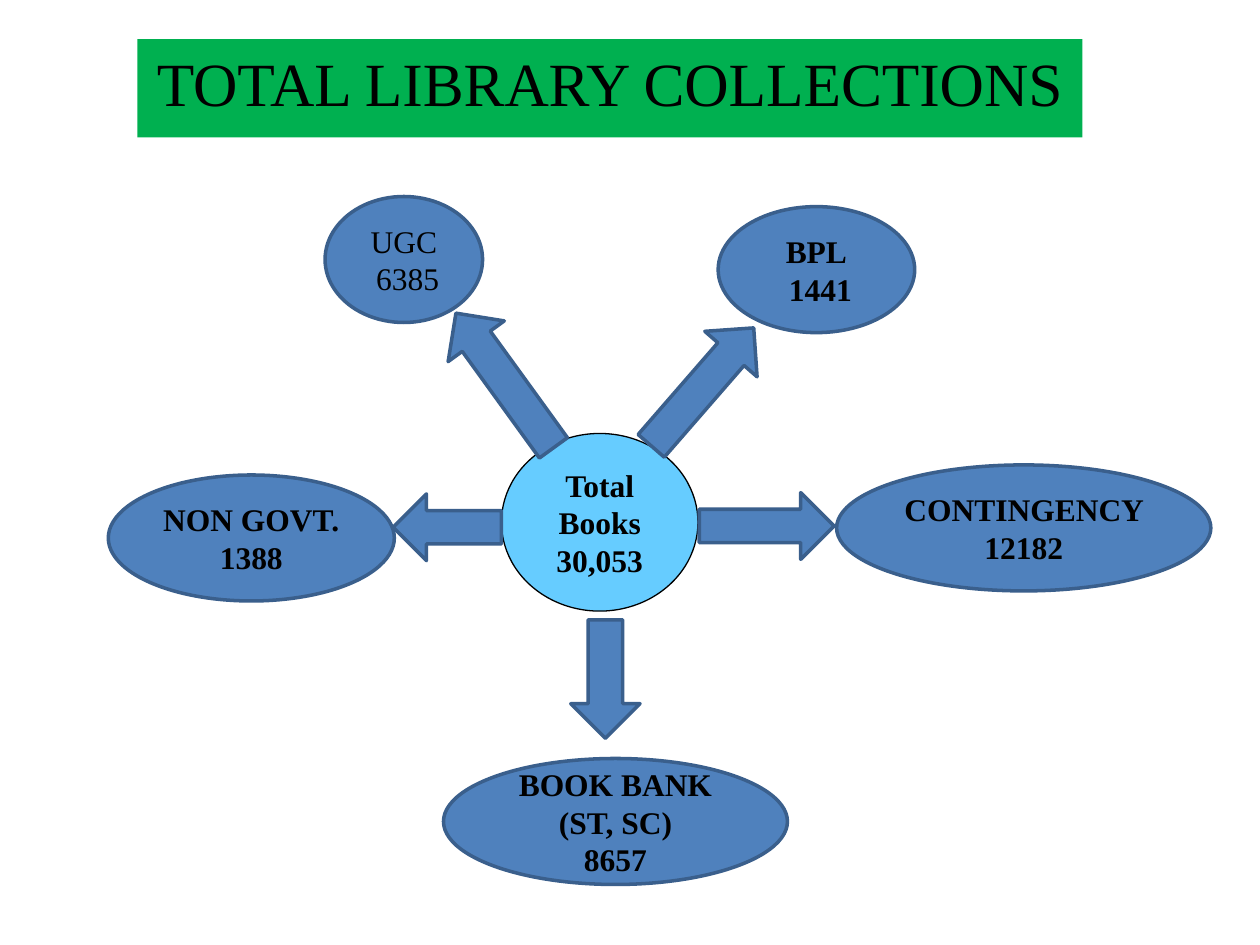
from pptx import Presentation
from pptx.dml.color import RGBColor
from pptx.enum.shapes import MSO_SHAPE
from pptx.enum.text import MSO_ANCHOR, PP_ALIGN
from pptx.util import Inches, Pt

BLUE = RGBColor(0x4F, 0x81, 0xBD)
EDGE = RGBColor(0x3A, 0x5F, 0x8C)
SKY = RGBColor(0x66, 0xCC, 0xFF)
GREEN = RGBColor(0x00, 0xB0, 0x50)
BLACK = RGBColor(0, 0, 0)
FONT = "Times New Roman"

TITLE = "TOTAL LIBRARY COLLECTIONS"
TOTAL = "Total Books 30,053"
# left, top, width, bold, lines
GROUPS = [
    (2.58, 1.56, 1.25, False, ["UGC", " 6385"]),
    (6.64, 3.69, 2.97, True, ["CONTINGENCY 12182"]),
    (0.86, 3.77, 2.27, True, ["NON GOVT.", "1388"]),
    (5.7, 1.64, 1.56, True, ["BPL", " 1441"]),
    (3.52, 6.02, 2.73, True, ["BOOK BANK (ST, SC)", "8657"]),
]
HEIGHT = 1
# kind, left, top, width, height, rotation
ARROWS = [
    (MSO_SHAPE.RIGHT_ARROW, 5.55, 3.91, 1.07, 0.53, 0),
    (MSO_SHAPE.DOWN_ARROW, 4.53, 4.92, 0.55, 0.94, 0),
    (MSO_SHAPE.LEFT_ARROW, 3.12, 3.92, 0.86, 0.53, 0),
    (MSO_SHAPE.DOWN_ARROW, 3.73, 2.36, 0.55, 1.32, 144.1),
    (MSO_SHAPE.DOWN_ARROW, 5.3, 2.45, 0.55, 1.24, 221),
]

deck = Presentation()
deck.slide_width, deck.slide_height = Inches(10), Inches(7.5)
slide = deck.slides.add_slide(deck.slide_layouts[6])


def draw(kind, box, fill=BLUE, line=EDGE, weight=2):
    shape = slide.shapes.add_shape(kind, *map(Inches, box))
    shape.shadow.inherit = False
    shape.fill.solid()
    shape.fill.fore_color.rgb = fill
    if line is None:
        shape.line.fill.background()
    else:
        shape.line.color.rgb = line
        shape.line.width = Pt(weight)
    return shape


def write(shape, lines, size=18, bold=True, anchor=MSO_ANCHOR.MIDDLE):
    frame = shape.text_frame
    frame.word_wrap = True
    frame.vertical_anchor = anchor
    frame.margin_left = frame.margin_right = Inches(0.08)
    frame.text = "\n".join(lines)
    for para in frame.paragraphs:
        para.alignment = PP_ALIGN.CENTER
        font = para.font
        font.name, font.size, font.bold = FONT, Pt(size), bold
        font.color.rgb = BLACK


hub = draw(MSO_SHAPE.OVAL, (3.98, 3.44, 1.56, 1.41), SKY, BLACK, 0.75)
write(hub, [TOTAL], anchor=MSO_ANCHOR.TOP)
banner = draw(MSO_SHAPE.RECTANGLE, (1.09, 0.31, 7.5, 0.78), GREEN, None)
write(banner, [TITLE], 35.1, False, MSO_ANCHOR.TOP)

for left, top, width, bold, lines in GROUPS:
    oval = draw(MSO_SHAPE.OVAL, (left, top, width, HEIGHT))
    write(oval, lines, bold=bold)

for kind, *box, turn in ARROWS:
    draw(kind, box).rotation = turn

deck.save("out.pptx")
